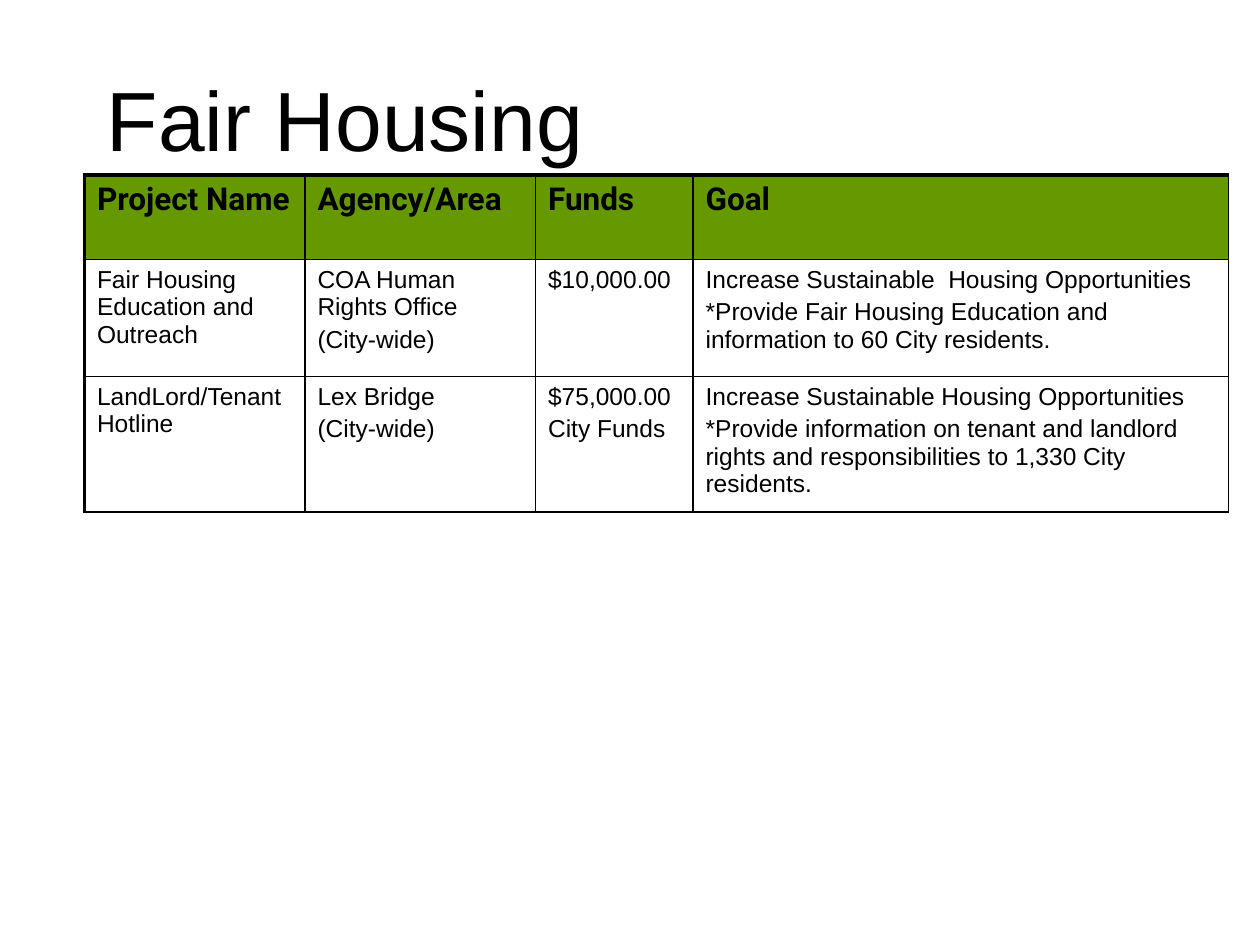
from dataclasses import dataclass

import lxml.etree
import pptx
import pptx.dml.color
import pptx.enum.text
import pptx.oxml
import pptx.oxml.ns
import pptx.util

BLACK = pptx.dml.color.RGBColor(0x00, 0x00, 0x00)
GREEN = pptx.dml.color.RGBColor(0x66, 0x99, 0x00)

SLIDE_WIDTH, SLIDE_HEIGHT = pptx.util.Inches(10), pptx.util.Inches(7.5)
COLUMN_WIDTHS = (1.75, 1.83, 1.25, 4.25)
ROW_HEIGHTS = (0.67, 0.93, 0.93)
HEADINGS = ("Project Name", "Agency/Area", "Funds", "Goal")
THIN, THICK = 1, 2.25


@dataclass
class Project:
    """One table row; a line break in a field starts a new paragraph."""
    name: str
    agency: str
    funds: str
    goal: str

    def fields(self) -> tuple[str, ...]:
        return self.name, self.agency, self.funds, self.goal


PROJECTS = (
    Project(
        "Fair Housing Education and Outreach",
        "COA Human Rights Office\n(City-wide)",
        "$10,000.00",
        "Increase Sustainable  Housing Opportunities\n"
        "*Provide Fair Housing Education and information to 60 City residents.",
    ),
    Project(
        "LandLord/Tenant Hotline",
        "Lex Bridge\n(City-wide)",
        "$75,000.00\nCity Funds",
        "Increase Sustainable Housing Opportunities\n"
        "*Provide information on tenant and landlord rights and "
        "responsibilities to 1,330 City residents.",
    ),
)


def write_text(frame, text: str, *, size: float, font: str = "Arial",
               bold: bool = False, gap: float = 2.8) -> None:
    """Fill a text frame, leaving a gap in points before later paragraphs."""
    frame.word_wrap = True
    for index, line in enumerate(text.split("\n")):
        paragraph = frame.add_paragraph() if index else frame.paragraphs[0]
        paragraph.space_before = pptx.util.Pt(gap if index else 0)
        run = paragraph.add_run()
        run.text = line
        run.font.name = font
        run.font.size = pptx.util.Pt(size)
        run.font.bold = bold
        run.font.color.rgb = BLACK
        # The paragraph mark would otherwise stretch the last line to 18 pt.
        lxml.etree.SubElement(paragraph._p, pptx.oxml.ns.qn("a:endParaRPr"),
                              sz=str(int(size * 100)))


def set_borders(cell, left: float, top: float) -> None:
    """Draw the four cell edges; right and bottom are always thin."""
    properties = cell._tc.get_or_add_tcPr()
    edges = (("lnL", left), ("lnR", THIN), ("lnT", top), ("lnB", THIN))
    for position, (edge, width) in enumerate(edges):
        line = pptx.oxml.parse_xml(
            f'<a:{edge} {pptx.oxml.ns.nsdecls("a")} w="{pptx.util.Pt(width)}">'
            f'<a:solidFill><a:srgbClr val="{BLACK}"/></a:solidFill></a:{edge}>')
        properties.insert(position, line)


def add_title(slide) -> None:
    title = slide.shapes.add_textbox(
        int(SLIDE_WIDTH * 0.075), pptx.util.Inches(0.49),
        pptx.util.Inches(4.58), pptx.util.Inches(0.9))
    write_text(title.text_frame, "Fair Housing", size=48)


def add_projects_table(slide) -> None:
    rows = [HEADINGS] + [project.fields() for project in PROJECTS]
    table = slide.shapes.add_table(
        len(rows), len(HEADINGS), pptx.util.Inches(0.67), pptx.util.Inches(1.39),
        pptx.util.Inches(sum(COLUMN_WIDTHS)),
        pptx.util.Inches(sum(ROW_HEIGHTS))).table
    table.horz_banding = False
    for column, width in zip(table.columns, COLUMN_WIDTHS):
        column.width = pptx.util.Inches(width)
    for row, height in zip(table.rows, ROW_HEIGHTS):
        row.height = pptx.util.Inches(height)

    for row_index, fields in enumerate(rows):
        is_header = row_index == 0
        for column_index, text in enumerate(fields):
            cell = table.cell(row_index, column_index)
            cell.vertical_anchor = pptx.enum.text.MSO_ANCHOR.TOP
            if is_header:
                cell.fill.solid()
                cell.fill.fore_color.rgb = GREEN
                write_text(cell.text_frame, text, size=18, font="Roboto", bold=True)
            else:
                cell.fill.background()
                write_text(cell.text_frame, text, size=14)
            set_borders(cell, left=THIN if column_index else THICK,
                        top=THICK if is_header else THIN)


def main() -> None:
    presentation = pptx.Presentation()
    presentation.slide_width = SLIDE_WIDTH
    presentation.slide_height = SLIDE_HEIGHT
    slide = presentation.slides.add_slide(presentation.slide_layouts[6])
    add_title(slide)
    add_projects_table(slide)
    presentation.save("out.pptx")


if __name__ == "__main__":
    main()
